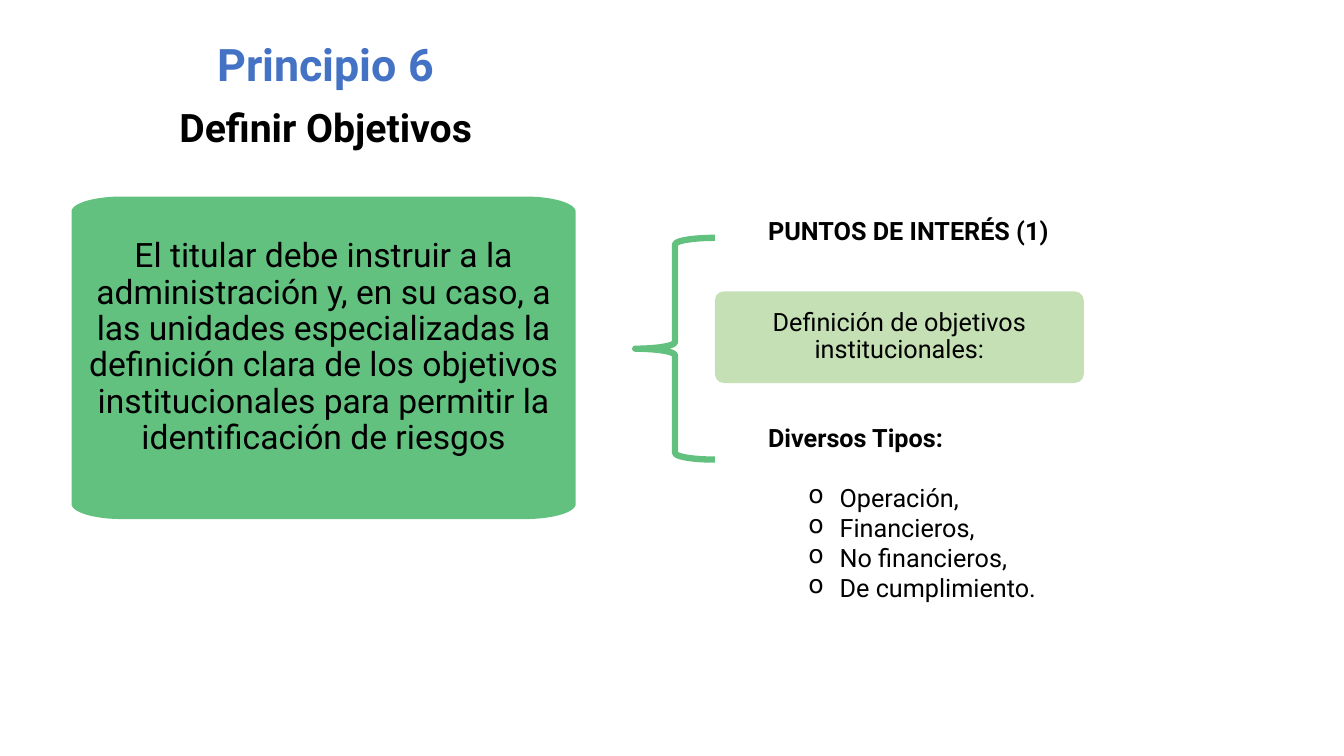
from math import cos, pi, sin

from lxml.etree import SubElement
from pptx import Presentation
from pptx.dml.color import RGBColor
from pptx.enum.shapes import MSO_SHAPE as Shape
from pptx.enum.text import MSO_ANCHOR as Anchor, PP_ALIGN as Align
from pptx.oxml.ns import qn
from pptx.util import Inches, Pt

BLACK = RGBColor(0x00, 0x00, 0x00)
BLUE = RGBColor(0x44, 0x72, 0xC4)
GREEN = RGBColor(0x63, 0xC1, 0x80)
PALE_GREEN = RGBColor(0xC5, 0xE0, 0xB4)

PRINCIPLE = (
    "El titular debe instruir a la administración y, en su caso, a las unidades "
    "especializadas la definición clara de los objetivos institucionales para "
    "permitir la identificación de riesgos"
)
OBJECTIVE_TYPES = ["Operación,", "Financieros,", "No financieros,", "De cumplimiento."]


def style(para, text, size, color=BLACK, bold=False):
    para.text = text
    para.font.name = "Roboto"
    para.font.size = Pt(size)
    para.font.color.rgb = color
    para.font.bold = bold


def center(para):
    para.alignment = Align.CENTER
    para.line_spacing = 0.9


def add_text_box(page, left, top, width, height):
    frame = page.shapes.add_textbox(
        Inches(left), Inches(top), Inches(width), Inches(height)
    ).text_frame
    frame.word_wrap = True
    return frame


def paint(shape, color):
    shape.shadow.inherit = False
    shape.fill.solid()
    shape.fill.fore_color.rgb = color
    shape.line.fill.background()


def fill_centered(shape, text, size, inset, bottom):
    frame = shape.text_frame
    frame.word_wrap = True
    frame.vertical_anchor = Anchor.MIDDLE
    frame.margin_left = frame.margin_right = frame.margin_top = Inches(inset)
    frame.margin_bottom = Inches(bottom)
    para = frame.paragraphs[0]
    center(para)
    style(para, text, size)


def add_soft_panel(page, left, top, width, height, radius_x, radius_y, steps=24):
    points = []
    for corner in range(4):
        middle_x = left + (radius_x if corner in (0, 3) else width - radius_x)
        middle_y = top + (radius_y if corner in (0, 1) else height - radius_y)
        for step in range(steps + 1):
            angle = pi + (corner + step / steps) * pi / 2
            points.append((
                Inches(middle_x + radius_x * cos(angle)),
                Inches(middle_y + radius_y * sin(angle)),
            ))
    builder = page.shapes.build_freeform(*points[0])
    builder.add_line_segments(points[1:], close=True)
    panel = builder.convert_to_shape()
    paint(panel, GREEN)
    return panel


def add_title(page):
    frame = add_text_box(page, -0.21, 0.38, 6.88, 1.2)
    first, second = frame.paragraphs[0], frame.add_paragraph()
    for para in (first, second):
        center(para)
    first.space_after = Pt(12)
    style(first, "Principio 6", 32, BLUE, bold=True)
    style(second, "Definir Objetivos", 28, bold=True)


def add_brace(page):
    brace = page.shapes.add_shape(
        Shape.LEFT_BRACE, Inches(6.3), Inches(2.36), Inches(0.79), Inches(2.2)
    )
    brace.shadow.inherit = False
    brace.fill.background()
    brace.line.color.rgb = GREEN
    brace.line.width = Pt(4.5)


def add_definition(page):
    card = page.shapes.add_shape(
        Shape.ROUNDED_RECTANGLE, Inches(7.09), Inches(2.89), Inches(3.66), Inches(0.91)
    )
    card.adjustments[0] = 0.1
    paint(card, PALE_GREEN)
    fill_centered(card, "Definición de objetivos institucionales:", 18, 0.03, 0.03)


def add_bullet(para):
    properties = para._p.get_or_add_pPr()
    properties.set("marL", str(Inches(0.71)))
    properties.set("indent", str(Inches(-0.31)))
    SubElement(properties, qn("a:buChar")).set("char", "o")


def add_types(page):
    frame = add_text_box(page, 7.52, 4.14, 5.53, 1.92)
    style(frame.paragraphs[0], "Diversos Tipos:", 18, bold=True)
    frame.paragraphs[0].space_after = Pt(21)
    for name in OBJECTIVE_TYPES:
        para = frame.add_paragraph()
        add_bullet(para)
        style(para, name, 18)


def main():
    deck = Presentation()
    deck.slide_width, deck.slide_height = Inches(13.33), Inches(7.5)
    page = deck.slides.add_slide(deck.slide_layouts[6])
    panel = add_soft_panel(page, 0.71, 1.95, 5, 3.2, 0.5, 0.15)
    fill_centered(panel, PRINCIPLE, 24, 0.07, 0.27)
    add_title(page)
    add_brace(page)
    add_definition(page)
    interest = add_text_box(page, 7.52, 2.09, 4.92, 0.4)
    style(interest.paragraphs[0], "PUNTOS DE INTERÉS (1)", 18, bold=True)
    add_types(page)
    deck.save("out.pptx")


if __name__ == "__main__":
    main()
